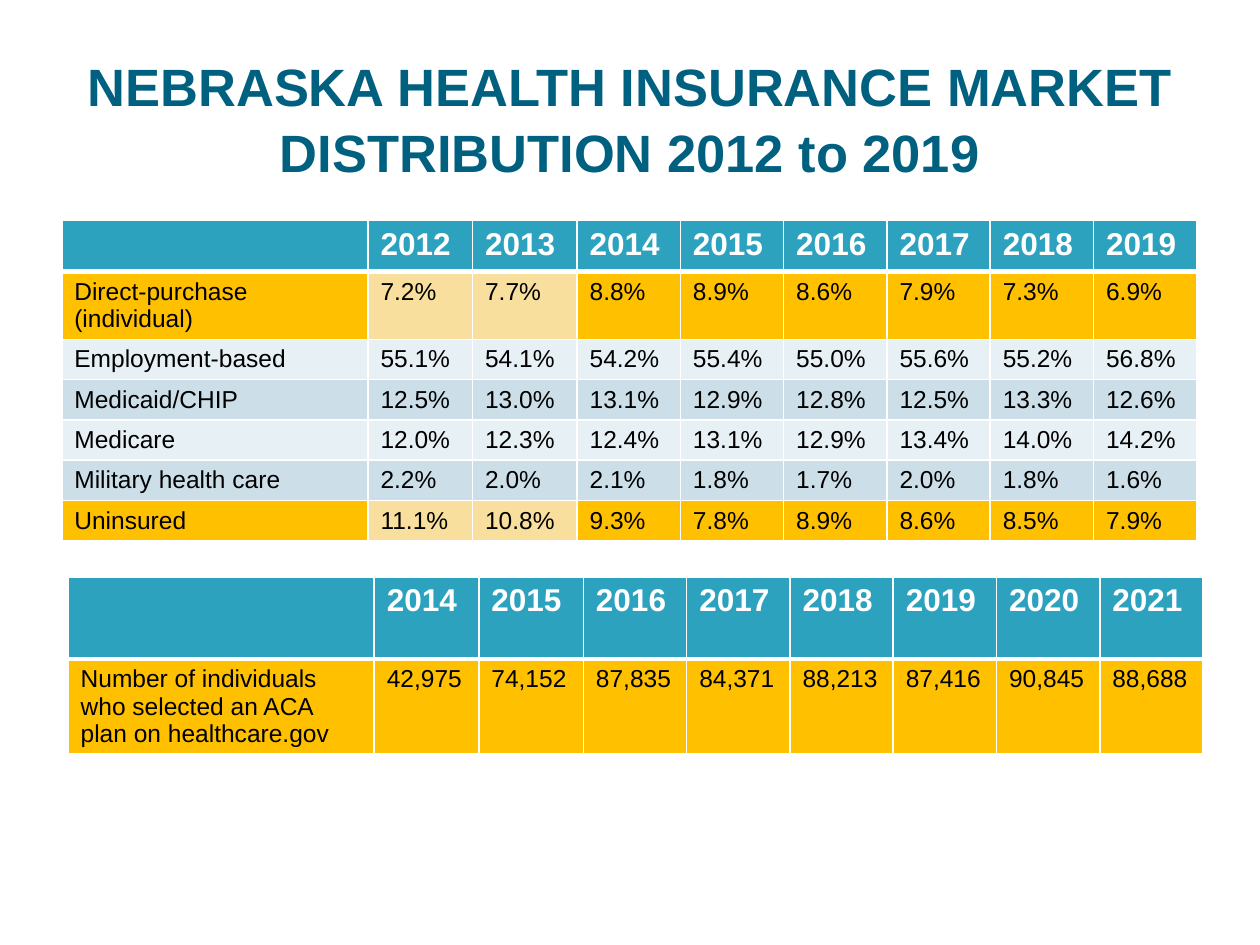
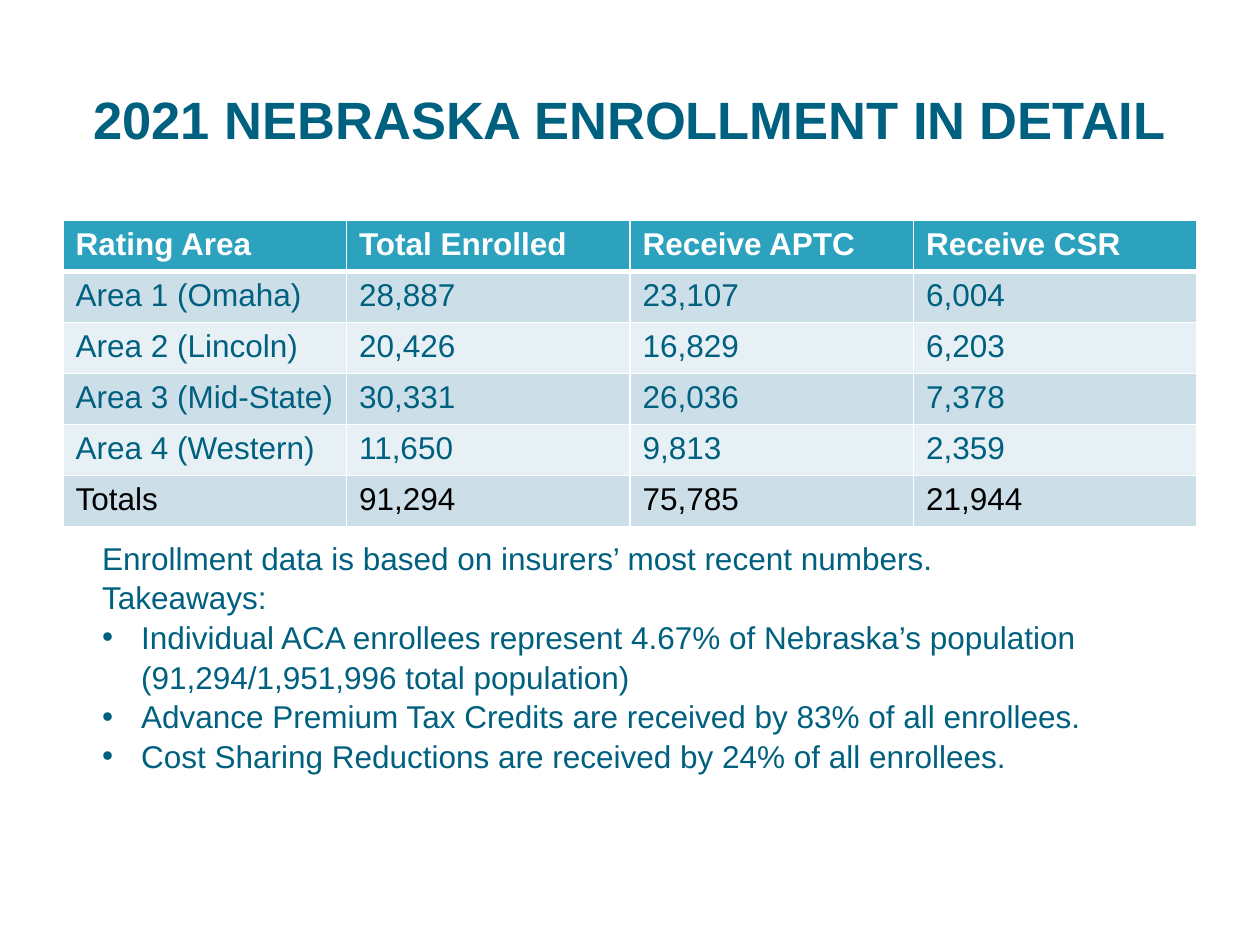
from dataclasses import dataclass

from lxml import etree
from pptx import Presentation
from pptx import util as u
from pptx.dml.color import RGBColor
from pptx.enum import text
from pptx.oxml.ns import qn

FONT = "Arial"
TEAL, HEADER, WHITE, BLACK = "00607F", "2DA2BF", "FFFFFF", "000000"
GOLD, PALE_GOLD, LIGHT, MID = "FFC000", "F9DF9D", "E7F0F4", "CCDFE8"
GRID_COLUMNS, GRID_ROWS = 100, 75
SLIDE_WIDTH, SLIDE_HEIGHT = u.Inches(10), u.Inches(7.5)
LINE_SPACING = 1.05
YEAR_COLUMNS = [24.3] + [8.3] * 2 + [8.2] * 6

MARKET_ROWS = [
    ["", *map(str, range(2012, 2020))],
    ["Direct-purchase (individual)", "7.2%", "7.7%", "8.8%", "8.9%", "8.6%", "7.9%", "7.3%", "6.9%"],
    ["Employment-based", "55.1%", "54.1%", "54.2%", "55.4%", "55.0%", "55.6%", "55.2%", "56.8%"],
    ["Medicaid/CHIP", "12.5%", "13.0%", "13.1%", "12.9%", "12.8%", "12.5%", "13.3%", "12.6%"],
    ["Medicare", "12.0%", "12.3%", "12.4%", "13.1%", "12.9%", "13.4%", "14.0%", "14.2%"],
    ["Military health care", "2.2%", "2.0%", "2.1%", "1.8%", "1.7%", "2.0%", "1.8%", "1.6%"],
    ["Uninsured", "11.1%", "10.8%", "9.3%", "7.8%", "8.9%", "8.6%", "8.5%", "7.9%"],
]
PLAN_ROWS = [
    ["", *map(str, range(2014, 2022))],
    ["Number of individuals who selected an ACA plan on healthcare.gov",
     "42,975", "74,152", "87,835", "84,371", "88,213", "87,416", "90,845", "88,688"],
]
AREA_ROWS = [
    ["Rating Area", "Total Enrolled", "Receive APTC", "Receive CSR"],
    ["Area 1 (Omaha)", "28,887", "23,107", "6,004"],
    ["Area 2 (Lincoln)", "20,426", "16,829", "6,203"],
    ["Area 3 (Mid-State)", "30,331", "26,036", "7,378"],
    ["Area 4 (Western)", "11,650", "9,813", "2,359"],
    ["Totals", "91,294", "75,785", "21,944"],
]
INTRO = ["Enrollment data is based on insurers’ most recent numbers.", "Takeaways:"]
TAKEAWAYS = [
    "Individual ACA enrollees represent 4.67% of Nebraska’s population "
    "(91,294/1,951,996 total population)",
    "Advance Premium Tax Credits are received by 83% of all enrollees.",
    "Cost Sharing Reductions are received by 24% of all enrollees.",
]


@dataclass
class Box:
    """A region measured in grid columns and rows."""
    left: float
    top: float
    width: float
    height: float

    def frame(self):
        """Return left, top, width and height in slide units."""
        return across(self.left), down(self.top), across(self.width), down(self.height)


def across(columns):
    """Turn grid columns into a length."""
    return round(SLIDE_WIDTH * columns / GRID_COLUMNS)


def down(rows):
    """Turn grid rows into a length."""
    return round(SLIDE_HEIGHT * rows / GRID_ROWS)


def colour(value):
    """Turn a hex string into a colour."""
    return RGBColor.from_string(value)


def style(paragraph, size, ink, bold=False):
    """Set the font of every run in a paragraph."""
    for span in paragraph.runs:
        span.font.name, span.font.size, span.font.bold = FONT, u.Pt(size), bold
        span.font.color.rgb = colour(ink)


def place(shape, box):
    """Move a placeholder into a box and fix its text margins."""
    shape.left, shape.top, shape.width, shape.height = box.frame()
    frame = shape.text_frame
    frame.word_wrap, frame.auto_size = True, text.MSO_AUTO_SIZE.NONE
    frame.margin_left = frame.margin_right = u.Inches(0.1)
    frame.margin_top = frame.margin_bottom = u.Inches(0.05)
    return frame


def add_page(deck, layout, heading):
    """Add a slide with the shared title style."""
    page = deck.slides.add_slide(deck.slide_layouts[layout])
    frame = place(page.shapes.title, Box(5, 3, 90, 12.5))
    frame.text = heading
    frame.vertical_anchor = text.MSO_ANCHOR.MIDDLE
    paragraph = frame.paragraphs[0]
    paragraph.alignment = text.PP_ALIGN.CENTER
    paragraph.line_spacing = LINE_SPACING
    style(paragraph, 30, TEAL, True)
    return page


def set_borders(cell, bottom):
    """Draw white cell borders, with a chosen width below."""
    properties = cell._tc.get_or_add_tcPr()
    widths = {"a:lnL": 1, "a:lnR": 1, "a:lnT": 1, "a:lnB": bottom}
    for index, (tag, width) in enumerate(widths.items()):
        line = etree.Element(qn(tag), w=str(u.Pt(width)))
        fill = etree.SubElement(line, qn("a:solidFill"))
        etree.SubElement(fill, qn("a:srgbClr"), val=WHITE)
        properties.insert(index, line)


def fill_table(page, left, top, columns, heights, rows, fills, inks, size):
    """Add a table with a bold header and one fill list per body row."""
    box = Box(left, top, sum(columns), sum(heights))
    table = page.shapes.add_table(len(rows), len(columns), *box.frame()).table
    for column, width in zip(table.columns, columns):
        column.width = across(width)
    fills = [[HEADER] * len(columns), *fills]
    for r, values in enumerate(rows):
        table.rows[r].height = down(heights[r])
        for c, value in enumerate(values):
            cell = table.cell(r, c)
            cell.text = value
            cell.fill.solid()
            cell.fill.fore_color.rgb = colour(fills[r][c])
            set_borders(cell, 1 if r else 3)
            paragraph = cell.text_frame.paragraphs[0]
            if r:
                style(paragraph, size, inks[r - 1])
            else:
                style(paragraph, 18, WHITE, True)


def set_bullet(paragraph, bulleted):
    """Give a paragraph a hanging teal bullet or none."""
    properties = paragraph._p.get_or_add_pPr()
    indent = u.Inches(0.31) if bulleted else 0
    properties.set("marL", str(indent))
    properties.set("indent", str(-indent))
    if bulleted:
        tint = etree.SubElement(properties, qn("a:buClr"))
        etree.SubElement(tint, qn("a:srgbClr"), val=TEAL)
        etree.SubElement(properties, qn("a:buFont"), typeface=FONT)
        etree.SubElement(properties, qn("a:buChar"), char="•")
    else:
        etree.SubElement(properties, qn("a:buNone"))


def fill_notes(page, box):
    """Write the introduction and the bulleted takeaways."""
    frame = place(page.placeholders[1], box)
    frame.text = "\n".join(INTRO + TAKEAWAYS)
    for index, paragraph in enumerate(frame.paragraphs):
        set_bullet(paragraph, index >= len(INTRO))
        paragraph.space_before = u.Pt(0)
        paragraph.line_spacing = LINE_SPACING
        style(paragraph, 18, TEAL)


def market_slide(deck):
    """Build the market distribution slide."""
    page = add_page(deck, 5, "NEBRASKA HEALTH INSURANCE MARKET DISTRIBUTION 2012 to 2019")
    highlight = [GOLD] + [PALE_GOLD] * 2 + [GOLD] * 6
    bands = [[LIGHT] * 9, [MID] * 9] * 2
    fill_table(page, 4.9, 17.5, YEAR_COLUMNS, [3.8, 5.3] + [3.2] * 5, MARKET_ROWS,
               [highlight, *bands, highlight], [BLACK] * 6, 14)
    fill_table(page, 5.4, 45.8, YEAR_COLUMNS, [6.5, 7.5], PLAN_ROWS,
               [[GOLD] * 9], [BLACK], 14)


def enrollment_slide(deck):
    """Build the enrollment detail slide."""
    page = add_page(deck, 1, "2021 NEBRASKA ENROLLMENT IN DETAIL")
    bands = [[MID if r % 2 == 0 else LIGHT] * 4 for r in range(5)]
    fill_table(page, 5, 17.5, [22.5] * 4, [4.05] * 6, AREA_ROWS,
               bands, [TEAL] * 4 + [BLACK], 18)
    fill_notes(page, Box(7.1, 42.1, 85.8, 19.2))


def main():
    """Build and save the deck."""
    deck = Presentation()
    deck.slide_width, deck.slide_height = SLIDE_WIDTH, SLIDE_HEIGHT
    market_slide(deck)
    enrollment_slide(deck)
    deck.save("out.pptx")


if __name__ == "__main__":
    main()
